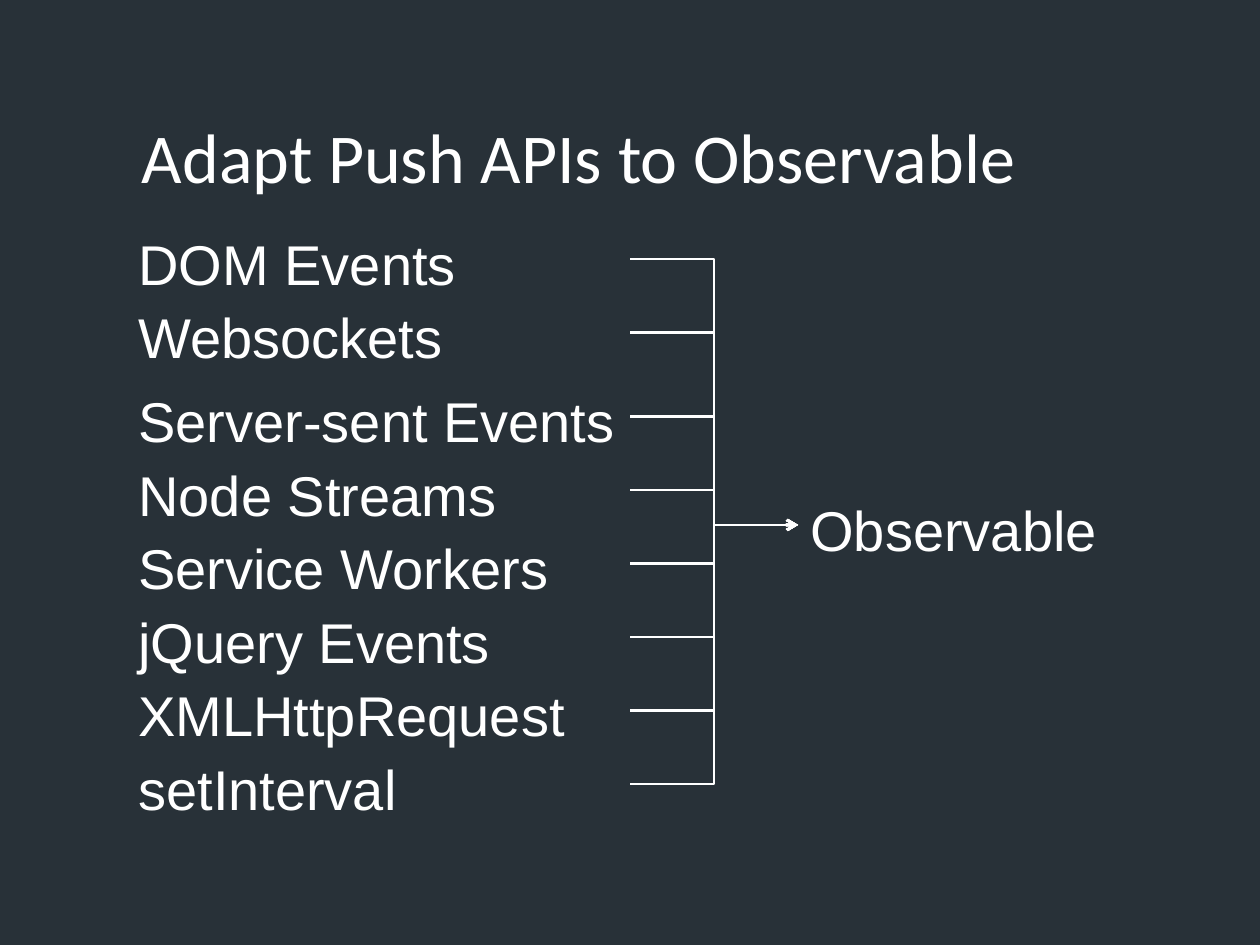
import pptx
import pptx.dml.color
import pptx.enum.shapes
import pptx.enum.text
import pptx.oxml
import pptx.util
from pptx.util import Pt

WHITE = pptx.dml.color.RGBColor(0xFF, 0xFF, 0xFF)
BACKGROUND = pptx.dml.color.RGBColor(0x28, 0x31, 0x38)

ANCHOR = pptx.enum.text.MSO_ANCHOR
TITLE_FONT = {"name": "Calibri", "size": Pt(40)}
LABEL_FONT = {"name": "Arial", "size": Pt(32)}
TITLE_FRAME = {"vertical_anchor": ANCHOR.BOTTOM, "margin_bottom": Pt(0)}
LABEL_FRAME = {"vertical_anchor": ANCHOR.TOP, "margin_top": Pt(7)}

# Each group of sources is set off from the one before by a wider gap.
SOURCE_GROUPS = [
    ["DOM Events", "Websockets"],
    ["Server-sent Events", "Node Streams", "Service Workers",
     "jQuery Events", "XMLHttpRequest", "setInterval"],
]
ROW_HEIGHT = 48
ROW_PITCH = 42
GROUP_GAP = 6


def set_attributes(target, values):
    for name, value in values.items():
        setattr(target, name, value)


def add_text(slide, text, box, frame_format, font_format):
    """Place one line of white text in box (left, top, width, height in points)."""
    shape = slide.shapes.add_textbox(*map(Pt, box))
    frame = shape.text_frame
    set_attributes(frame, {"word_wrap": True, **frame_format})
    run = frame.paragraphs[0].add_run()
    run.text = text
    set_attributes(run.font, font_format)
    run.font.color.rgb = WHITE
    return shape


def add_sources(slide, left, top, width):
    """Stack the push APIs downwards and return their text boxes."""
    shapes = []
    for group in SOURCE_GROUPS:
        for name in group:
            box = (left, top, width, ROW_HEIGHT)
            shapes.append(add_text(slide, name, box, LABEL_FRAME, LABEL_FONT))
            top += ROW_PITCH
        top += GROUP_GAP
    return shapes


def add_arrow(slide, source, target):
    """Join the right side of source to the left side of target."""
    connector = slide.shapes.add_connector(
        pptx.enum.shapes.MSO_CONNECTOR.ELBOW,
        source.left + source.width, source.top + source.height // 2,
        target.left, target.top + target.height // 2)
    connector.begin_connect(source, 3)
    connector.end_connect(target, 1)
    connector.line.color.rgb = WHITE
    connector.line.width = Pt(1.5)
    make_element = pptx.oxml.xmlchemy.OxmlElement
    arrowhead = make_element("a:tailEnd")
    arrowhead.set("type", "arrow")
    connector.line._get_or_add_ln().append(arrowhead)
    connector._element.spPr.append(make_element("a:effectLst"))


def build_slide(presentation):
    slide = presentation.slides.add_slide(presentation.slide_layouts[6])
    slide.background.fill.solid()
    slide.background.fill.fore_color.rgb = BACKGROUND
    add_text(slide, "Adapt Push APIs to Observable", (74, 22, 622, 91),
             TITLE_FRAME, TITLE_FONT)
    sources = add_sources(slide, 72, 124, 288)
    observable = add_text(slide, "Observable", (456, 276, 204, ROW_HEIGHT),
                          LABEL_FRAME, LABEL_FONT)
    for source in sources:
        add_arrow(slide, source, observable)


def main():
    presentation = pptx.Presentation()
    presentation.slide_width = Pt(720)
    presentation.slide_height = Pt(540)
    build_slide(presentation)
    presentation.save("out.pptx")


if __name__ == "__main__":
    main()
